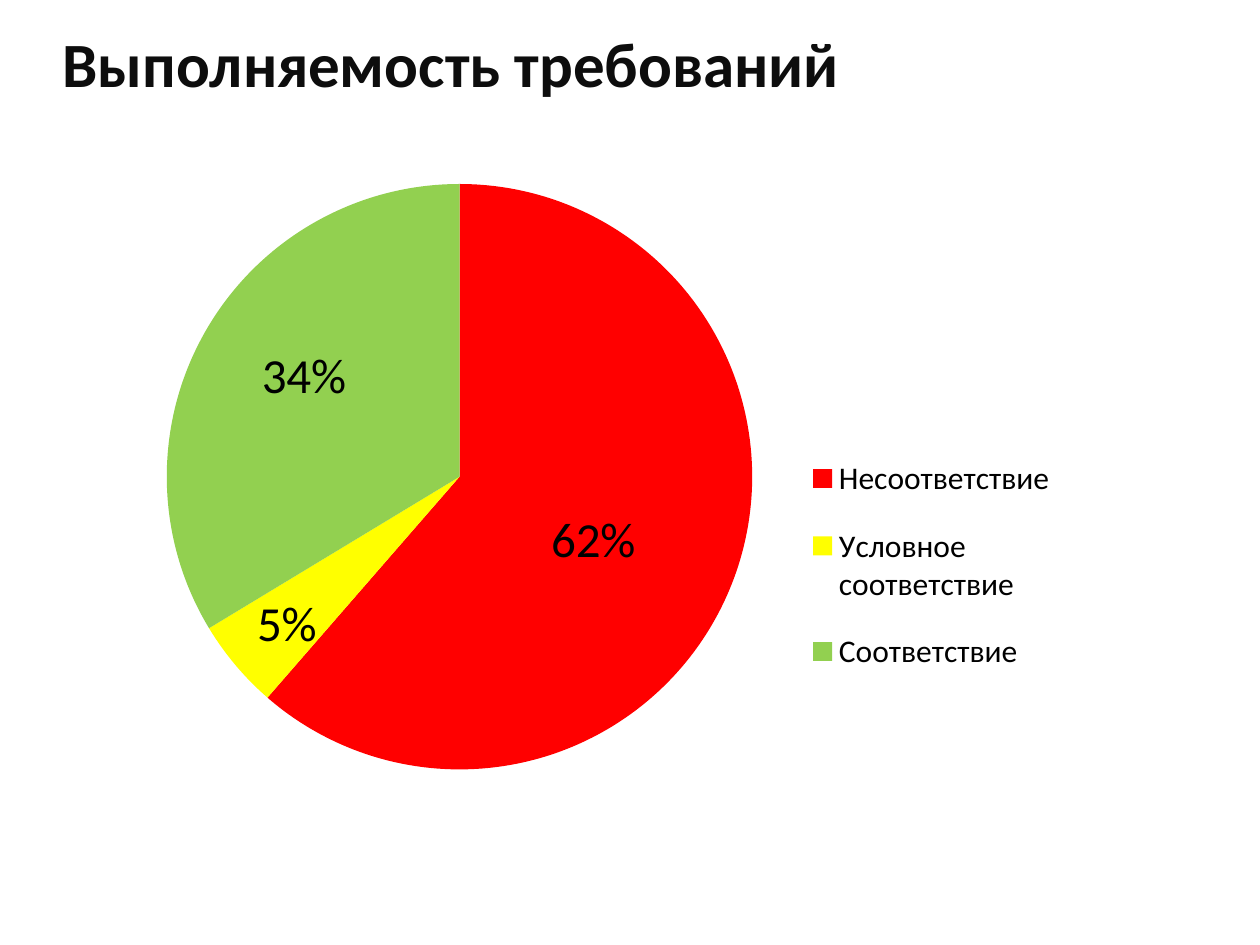
from dataclasses import dataclass

from lxml.etree import SubElement
from pptx import Presentation
from pptx.chart.data import CategoryChartData as Data
from pptx.dml.color import RGBColor as Rgb
from pptx.enum.chart import XL_CHART_TYPE as Kind
from pptx.enum.chart import XL_LABEL_POSITION as Spot
from pptx.enum.chart import XL_LEGEND_POSITION as Side
from pptx.enum.text import MSO_ANCHOR as Anchor
from pptx.oxml import parse_xml
from pptx.oxml.ns import nsdecls, qn
from pptx.util import Pt

SCALE = 914400 // 126  # EMU in one px


@dataclass(frozen=True)
class Theme:
    face: str = "Calibri"
    ink: str = "0D0D0D"
    text: str = "000000"
    head: int = 36
    label: int = 28
    key: int = 18


THEME = Theme()
FORM = '0"%"'
CHART = (35, 166, 1126, 635)
PIE = (132, 18, 586, 586)
LEGEND = (755, 264, 281, 270)

# name, percent, colour, label shift from the middle of the slice
PARTS = [
    ("Несоответствие", 62, "FF0000", (-3, 13)),
    ("Условное соответствие", 5, "FFFF00", (-61, 54)),
    ("Соответствие", 34, "92D050", (-28, -28)),
]


def px(*nums):
    return [n * SCALE for n in nums]


def style(font, size, color, bold=False):
    font.name, font.size, font.bold = THEME.face, Pt(size), bold
    font.color.rgb = Rgb.from_string(color)


def layout(mode, **nums):
    """Manual chart layout; px lengths become shares of the chart."""
    node = parse_xml(f"<c:layout {nsdecls('c')}/>")
    man = SubElement(node, qn("c:manualLayout"))
    if mode == "inner":
        SubElement(man, qn("c:layoutTarget"), val="inner")
    if mode != "shift":
        for axis in "xy":
            SubElement(man, qn(f"c:{axis}Mode"), val="edge")
    for key, num in nums.items():
        full = CHART[2] if key in "xw" else CHART[3]
        SubElement(man, qn(f"c:{key}"), val=f"{num / full:.3f}")
    return node


def add_title(slide, text):
    box = slide.shapes.add_textbox(*px(0, 0, 1260, 125))
    frame = box.text_frame
    frame.word_wrap = True
    frame.vertical_anchor = Anchor.MIDDLE
    para = frame.paragraphs[0]
    para._p.get_or_add_pPr().set("marL", str(50 * SCALE))
    run = para.add_run()
    run.text = text
    style(run.font, THEME.head, THEME.ink, True)


def add_slice(point, color, shift):
    fill = point.format.fill
    fill.solid()
    fill.fore_color.rgb = Rgb.from_string(color)
    # Label, moved off the middle of its slice
    label = point.data_label
    style(label.font, THEME.label, THEME.text)
    label.position = Spot.CENTER
    idx = label._get_or_add_dLbl().find(qn("c:idx"))
    form = parse_xml(f"<c:numFmt {nsdecls('c')} sourceLinked='0'/>")
    form.set("formatCode", FORM)
    idx.addnext(form)
    idx.addnext(layout("shift", x=shift[0], y=shift[1]))


def add_legend(chart):
    chart.has_legend = True
    legend = chart.legend
    legend.position = Side.RIGHT
    legend.include_in_layout = False
    style(legend.font, THEME.key, THEME.text)
    node = legend._element
    for old in node.findall(qn("c:layout")):
        node.remove(old)
    node.find(qn("c:legendPos")).addnext(layout("edge", **dict(zip("xywh", LEGEND))))


def add_pie(slide):
    data = Data()
    data.categories = [name for name, *_ in PARTS]
    data.add_series("Series 1", [part[1] for part in PARTS])
    chart = slide.shapes.add_chart(Kind.PIE, *px(*CHART), data).chart
    chart.has_title = False
    style(chart.font, 10, THEME.text)
    # Slices and their labels
    plot = chart.plots[0]
    plot.vary_by_categories = True
    row = plot.series[0]
    labels = row.data_labels
    labels.show_value = True
    labels.number_format = FORM
    labels.number_format_is_linked = False
    labels.position = Spot.CENTER
    style(labels.font, THEME.label, THEME.text)
    for num, (_, _, color, shift) in enumerate(PARTS):
        add_slice(row.points[num], color, shift)
    # Place of the pie
    area = chart._chartSpace.chart.plotArea
    for old in area.findall(qn("c:layout")):
        area.remove(old)
    area.insert(0, layout("inner", **dict(zip("xywh", PIE))))
    add_legend(chart)


def main():
    deck = Presentation()
    deck.slide_width, deck.slide_height = px(1260, 945)
    slide = deck.slides.add_slide(deck.slide_layouts[6])
    add_pie(slide)
    add_title(slide, "Выполняемость требований")
    deck.save("out.pptx")


if __name__ == "__main__":
    main()
